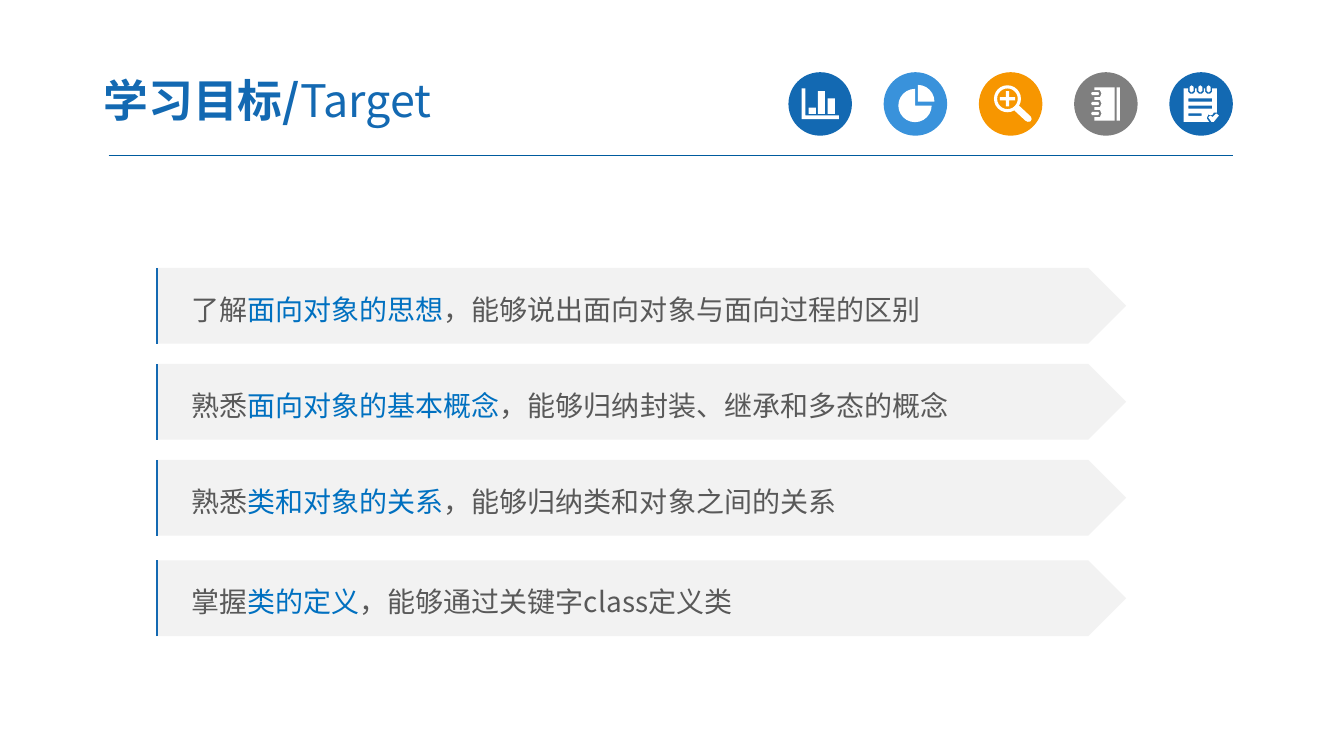
from math import cos, radians, sin

from lxml import etree
from pptx import Presentation
from pptx.dml.color import RGBColor
from pptx.enum.shapes import MSO_CONNECTOR, MSO_SHAPE
from pptx.enum.text import MSO_ANCHOR, PP_ALIGN
from pptx.oxml.ns import qn
from pptx.util import Cm, Pt

COLORS = {
    "blue": "1369B2", "sky": "3992DB", "orange": "F79600", "gray": "7F7F7F",
    "white": "FFFFFF", "plate": "F2F2F2", "text": "595959",
    "key": "0070C0", "rule": "005B9E",
}
FONT = "Noto Sans CJK SC"

prs = Presentation()
prs.slide_width, prs.slide_height = Cm(33.87), Cm(19.05)
s = prs.slides.add_slide(prs.slide_layouts[6])


def paint(sp, color):
    sp.shadow.inherit = False
    sp.fill.solid()
    sp.fill.fore_color.rgb = RGBColor.from_string(COLORS[color])
    sp.line.fill.background()


def arc(cx, cy, radius, start, end):
    angles = [radians(a) for a in range(start, end + 1, 15)]
    return [(cx + radius * cos(a), cy + radius * sin(a)) for a in angles]


rule = s.shapes.add_connector(MSO_CONNECTOR.STRAIGHT, Cm(2.74), Cm(3.93), Cm(31.07), Cm(3.93))
rule.line.color.rgb = RGBColor.from_string(COLORS["rule"])
rule.line.width = Pt(0.75)
etree.SubElement(rule._element.spPr, qn("a:effectLst"))

bar_icon = [[(0.33, 0.41), (0.43, 0.41), (0.43, 1.09), (1.27, 1.09), (1.27, 1.18), (0.33, 1.18)]]
for x, top in ((0.51, 0.89), (0.74, 0.48), (0.99, 0.66)):
    bar_icon.append([(x, top), (x + 0.18, top), (x + 0.18, 1.05), (x, 1.05)])

pie_icon = [
    [(0.79, 0.84)] + arc(0.79, 0.84, 0.42, 0, 270),
    [(0.86, 0.74)] + arc(0.86, 0.74, 0.42, 270, 360),
]

lens_icon = [
    arc(0.72, 0.67, 0.34, 0, 345),
    arc(0.72, 0.67, 0.26, 0, 345),
    [(0.68, 0.48), (0.76, 0.48), (0.76, 0.63), (0.91, 0.63), (0.91, 0.71), (0.76, 0.71),
     (0.76, 0.86), (0.68, 0.86), (0.68, 0.71), (0.53, 0.71), (0.53, 0.63), (0.68, 0.63)],
    [(1.02, 0.85), (1.31, 1.12), (1.33, 1.18), (1.3, 1.24), (1.23, 1.25), (1.17, 1.22), (0.9, 0.97)],
]

cover = [(0.51, 1.22), (1.02, 1.22), (1.02, 0.38), (0.51, 0.38)]
book_icon = [cover, [(1.07, 0.38), (1.15, 0.38), (1.15, 1.22), (1.07, 1.22)]]
for y in (0.54, 0.79, 1.04):
    cover += [(0.51, y - 0.09), (0.65, y - 0.09), (0.69, y), (0.65, y + 0.09), (0.51, y + 0.09)]
    book_icon.append([(0.45, y - 0.04), (0.61, y - 0.04), (0.63, y), (0.61, y + 0.04),
                      (0.45, y + 0.04), (0.43, y)])

page = [(1.2, 0.41), (1.2, 1.02), (1.12, 1.02), (1.08, 1.08), (0.98, 1.07), (0.94, 1.16),
        (1.0, 1.25), (0.36, 1.25), (0.36, 0.41)]
pad_icon = [
    page,
    [(0.98, 1.14), (1.03, 1.09), (1.09, 1.13), (1.18, 1.04), (1.25, 1.09), (1.12, 1.25), (1.06, 1.25)],
]
for x in (0.56, 0.78, 0.99):
    page += [(x - 0.09, 0.41), (x - 0.09, 0.49), (x - 0.04, 0.54), (x + 0.04, 0.54),
             (x + 0.09, 0.49), (x + 0.09, 0.41)]
    pad_icon.append([(x - 0.05, 0.37), (x, 0.33), (x + 0.05, 0.37), (x + 0.05, 0.47),
                     (x, 0.51), (x - 0.05, 0.47)])
for y, right, h in ((0.66, 1.08, 0.08), (0.84, 1.08, 0.08), (1.04, 0.81, 0.06)):
    pad_icon.append([(0.48, y), (right, y), (right, y + h), (0.48, y + h)])

icons = [("blue", bar_icon), ("sky", pie_icon), ("orange", lens_icon),
         ("gray", book_icon), ("blue", pad_icon)]
icon_top = 1.82
for i, (color, contours) in enumerate(icons):
    left = 19.87 + 2.4 * i
    paint(s.shapes.add_shape(MSO_SHAPE.OVAL, Cm(left), Cm(icon_top), Cm(1.6), Cm(1.6)), color)
    builder = None
    for contour in contours:
        points = [(Cm(left + x), Cm(icon_top + y)) for x, y in contour]
        if builder is None:
            builder = s.shapes.build_freeform(*points[0])
        else:
            builder.move_to(*points[0])
        builder.add_line_segments(points[1:], close=True)
    paint(builder.convert_to_shape(), "white")

title = s.shapes.add_textbox(Cm(2.28), Cm(1.6), Cm(13.26), Cm(1.83))
title.text_frame.margin_left = title.text_frame.margin_right = Cm(0.33)
texts = [(title, 32, [("学习目标/", "blue", True), ("Target", "blue", False)])]

goals = [
    (6.75, "了解", "面向对象的思想", "，能够说出面向对象与面向过程的区别"),
    (9.17, "熟悉", "面向对象的基本概念", "，能够归纳封装、继承和多态的概念"),
    (11.59, "熟悉", "类和对象的关系", "，能够归纳类和对象之间的关系"),
    (14.12, "掌握", "类的定义", "，能够通过关键字class定义类"),
]
for top, verb, key, rest in goals:
    plate = s.shapes.add_shape(MSO_SHAPE.PENTAGON, Cm(3.94), Cm(top), Cm(24.44), Cm(1.91))
    paint(plate, "plate")
    plate.text_frame.margin_left = Cm(0.88)
    builder = s.shapes.build_freeform(Cm(3.95), Cm(top + 1.91))
    builder.add_line_segments([(Cm(3.95), Cm(top))], close=False)
    builder.move_to(Cm(4.23), Cm(top))
    edge = builder.convert_to_shape()
    edge.shadow.inherit = False
    edge.fill.background()
    edge.line.color.rgb = RGBColor.from_string(COLORS["blue"])
    edge.line.width = Pt(1.5)
    texts.append((plate, 20, [(verb, "text", False), (key, "key", False), (rest, "text", False)]))

for sp, size, runs in texts:
    tf = sp.text_frame
    tf.word_wrap = True
    tf.vertical_anchor = MSO_ANCHOR.MIDDLE
    p = tf.paragraphs[0]
    p.alignment = PP_ALIGN.LEFT
    if sp is not title:
        p.line_spacing = 1.2
    p.font.size = Pt(size)
    p.font.name = FONT
    etree.SubElement(p._p.pPr.find(qn("a:defRPr")), qn("a:ea"), typeface=FONT)
    for text, color, bold in runs:
        r = p.add_run()
        r.text = text
        r.font.bold = bold
        r.font.color.rgb = RGBColor.from_string(COLORS[color])

prs.save("out.pptx")
